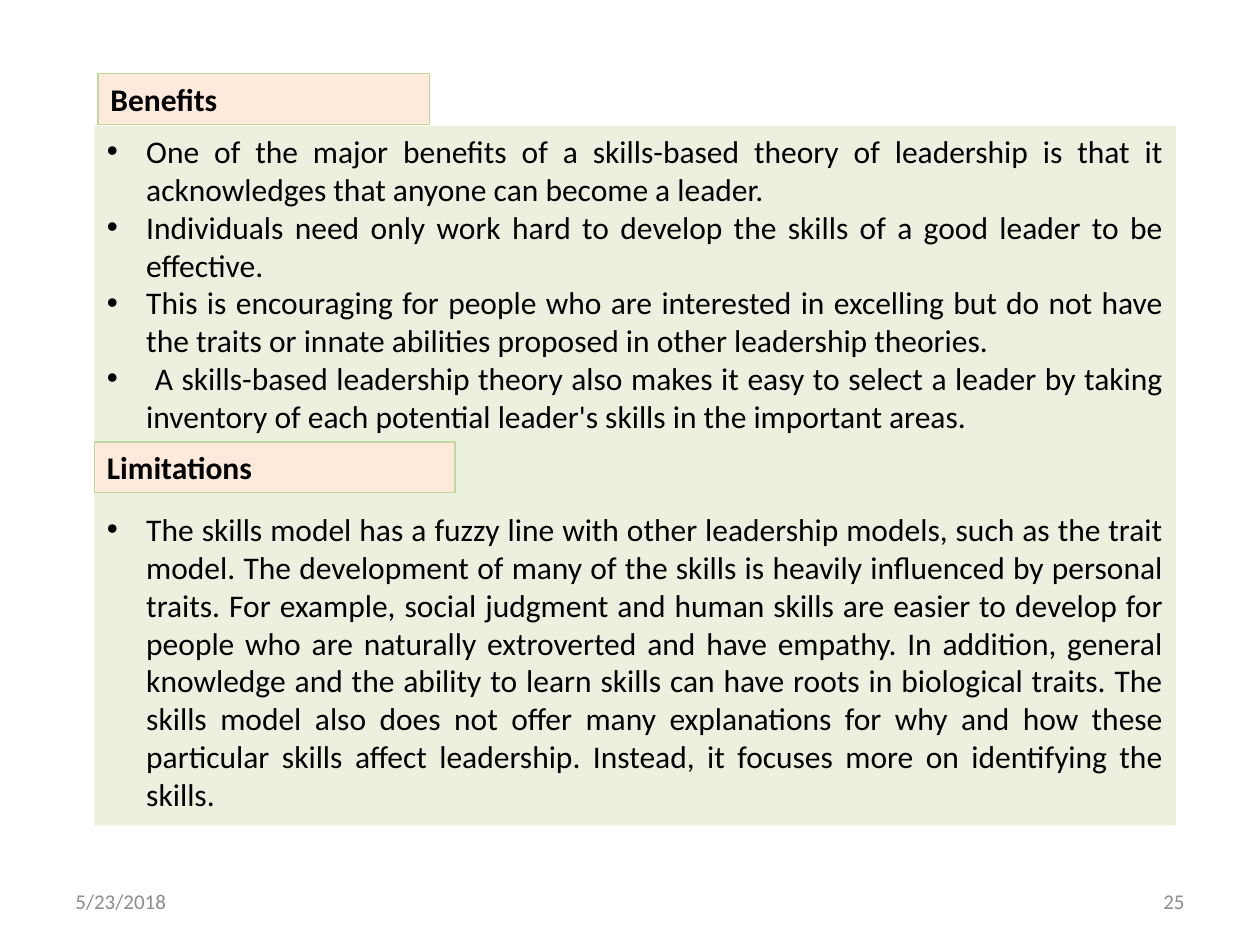
from lxml import etree
from pptx import Presentation
from pptx.dml.color import RGBColor
from pptx.enum.shapes import MSO_SHAPE
from pptx.enum.text import MSO_ANCHOR, PP_ALIGN
from pptx.oxml.ns import qn
from pptx.util import Pt

RECT = MSO_SHAPE.RECTANGLE
LEFT, RIGHT, JUSTIFY = PP_ALIGN.LEFT, PP_ALIGN.RIGHT, PP_ALIGN.JUSTIFY
TOP, MIDDLE = MSO_ANCHOR.TOP, MSO_ANCHOR.MIDDLE

BENEFITS = [
    "One of the major benefits of a skills-based theory of leadership is that it "
    "acknowledges that anyone can become a leader. ",
    "Individuals need only work hard to develop the skills of a good leader to be effective. ",
    "This is encouraging for people who are interested in excelling but do not have "
    "the traits or innate abilities proposed in other leadership theories.",
    " A skills-based leadership theory also makes it easy to select a leader by taking "
    "inventory of each potential leader's skills in the important areas.",
]
LIMITATIONS = [
    "The skills model has a fuzzy line with other leadership models, such as the trait model. "
    "The development of many of the skills is heavily influenced by personal traits. "
    "For example, social judgment and human skills are easier to develop for people who are "
    "naturally extroverted and have empathy. In addition, general knowledge and the ability "
    "to learn skills can have roots in biological traits. The skills model also does not offer "
    "many explanations for why and how these particular skills affect leadership. "
    "Instead, it focuses more on identifying the skills.",
]
# text, (left, top, width, height)
HEADINGS = [
    ("Benefits", (56, 42, 189.5, 29)),
    ("Limitations", (54, 252.5, 206, 29)),
]
FOOTERS = [
    ("5/23/2018", (36, 500.5, 168, 28.75), LEFT),
    ("25", (516, 500.5, 168, 28.75), RIGHT),
]
PANEL = (54, 72, 618, 399.75)
HEADING_GAP = 43.2  # two text lines, left free for the second heading
INDENT = 22.5


def color(hex_code):
    return RGBColor.from_string(hex_code)


def add_panel(box, fill, line=None):
    sp = slide.shapes.add_shape(RECT, *map(Pt, box))
    sp.shadow.inherit = False
    sp.fill.solid()
    sp.fill.fore_color.rgb = color(fill)
    if line:
        sp.line.color.rgb = color(line)
        sp.line.width = Pt(0.75)
    else:
        sp.line.fill.background()
    return sp


def write(sp, texts, align, anchor=TOP, size=18, font_color="000000", bold=False):
    tf = sp.text_frame
    tf.word_wrap = True
    tf.vertical_anchor = anchor
    for i, text in enumerate(texts):
        p = tf.add_paragraph() if i else tf.paragraphs[0]
        p.alignment = align
        r = p.add_run()
        r.text = text
        r.font.name = "Calibri"
        r.font.size = Pt(size)
        r.font.bold = bold
        r.font.color.rgb = color(font_color)
    return tf.paragraphs


def add_bullet(p):
    pPr = p._p.get_or_add_pPr()
    pPr.set("marL", str(Pt(INDENT)))
    pPr.set("indent", str(-Pt(INDENT)))
    etree.SubElement(pPr, qn("a:buFont"), typeface="Arial")
    etree.SubElement(pPr, qn("a:buChar"), char="•")


prs = Presentation()
prs.slide_width, prs.slide_height = Pt(720), Pt(540)
slide = prs.slides.add_slide(prs.slide_layouts[6])

for text, box, align in FOOTERS:
    write(slide.shapes.add_textbox(*map(Pt, box)), [text], align, MIDDLE, 12, "8C8C8C")

points = write(add_panel(PANEL, "EBF1DE"), BENEFITS + LIMITATIONS, JUSTIFY)
points[len(BENEFITS)].space_before = Pt(HEADING_GAP)
for p in points:
    add_bullet(p)

for text, box in HEADINGS:
    write(add_panel(box, "FDEADA", "C3D69B"), [text], JUSTIFY, bold=True)

prs.save("out.pptx")
